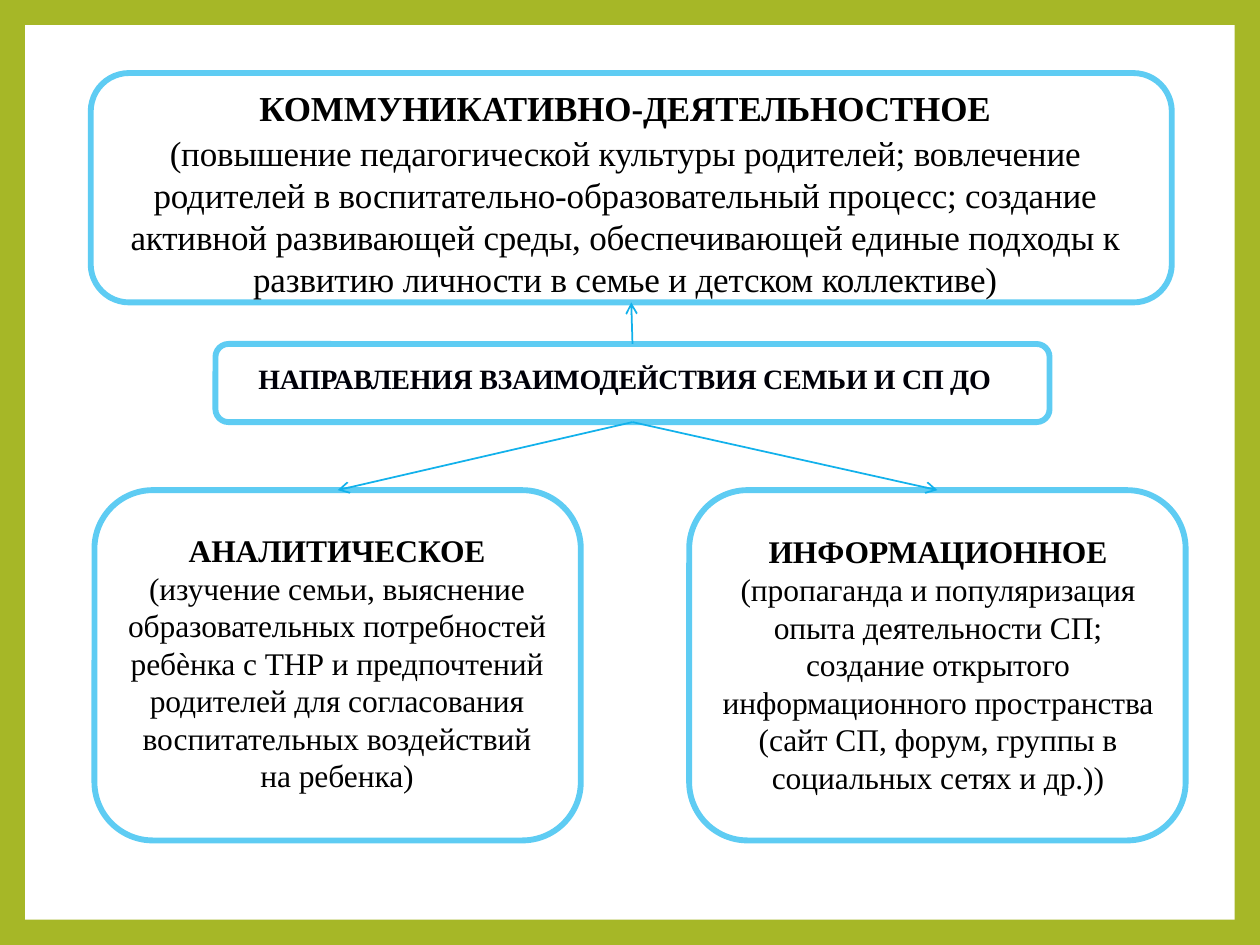
from lxml.etree import SubElement
from pptx import Presentation
from pptx.dml.color import RGBColor
from pptx.enum.shapes import MSO_CONNECTOR, MSO_SHAPE
from pptx.enum.text import MSO_ANCHOR, PP_ALIGN
from pptx.oxml.ns import qn
from pptx.util import Inches, Pt

COLORS = {"frame": "A6B727", "paper": "FFFFFF", "outline": "5ECCF3",
          "arrow": "12B1EB", "text": "000000", "center": "000009"}
FONT = "Times New Roman"
TOP, BOTTOM = 0, 2  # connection sites of a rounded rectangle

# Each card: frame and text area as left, top, width, height in inches;
# text size, line pitch, gap under the heading in points; spacing in 1/100 pt
CARDS = {
    "activity": {
        "frame": (0.72, 0.58, 8.58, 1.82), "area": (0.74, 0.69, 8.44, 1.7),
        "size": 20, "pitch": 24, "gap": 1.5, "spacing": -10,
        "color": "text",
        "heading": "КОММУНИКАТИВНО-ДЕЯТЕЛЬНОСТНОЕ",
        "lines": ["(повышение педагогической культуры родителей; вовлечение",
                  "родителей в воспитательно-образовательный процесс; создание",
                  "активной развивающей среды, обеспечивающей единые подходы к",
                  "развитию личности в семье и детском коллективе)"]},
    "directions": {
        "frame": (1.71, 2.73, 6.62, 0.62), "area": (1.04, 2.88, 7.84, 0.27),
        "size": 16, "pitch": 18.4, "gap": 0, "spacing": -15,
        "color": "center",
        "heading": "НАПРАВЛЕНИЯ ВЗАИМОДЕЙСТВИЯ СЕМЬИ И СП ДО",
        "lines": []},
    "analysis": {
        "frame": (0.75, 3.89, 3.86, 2.78), "area": (0.99, 4.22, 3.37, 2.12),
        "size": 18, "pitch": 21.4, "gap": 0, "spacing": -5,
        "color": "text",
        "heading": "АНАЛИТИЧЕСКОЕ",
        "lines": ["(изучение семьи, выяснение", "образовательных потребностей",
                  "ребѐнка с ТНР и предпочтений", "родителей для согласования",
                  "воспитательных воздействий", "на ребенка)"]},
    "information": {
        "frame": (5.47, 3.89, 3.94, 2.78), "area": (5.71, 4.22, 3.47, 2.12),
        "size": 18, "pitch": 21.5, "gap": 0.5, "spacing": -5,
        "color": "text",
        "heading": "ИНФОРМАЦИОННОЕ",
        "lines": ["(пропаганда и популяризация", "опыта деятельности СП;",
                  "создание открытого", "информационного пространства",
                  "(сайт СП, форум, группы в", "социальных сетях и др.))"]},
}
# Arrows leave the central card: start site, target card, target site
ARROWS = [(TOP, "activity", BOTTOM), (BOTTOM, "analysis", TOP),
          (BOTTOM, "information", TOP)]


def rgb(name):
    return RGBColor.from_string(COLORS[name])


def set_all(target, values):
    for name, value in values.items():
        setattr(target, name, value)


def add_panel(page, kind, frame, outline=None):
    panel = page.shapes.add_shape(kind, *map(Inches, frame))
    panel.shadow.inherit = False
    panel.fill.solid()
    panel.fill.fore_color.rgb = rgb("paper")
    if outline:
        panel.line.color.rgb = rgb(outline)
        panel.line.width = Pt(3.35)
    else:
        panel.line.fill.background()
    return panel


def add_words(page, card):
    box = page.shapes.add_textbox(*map(Inches, card["area"]))
    frame = box.text_frame
    set_all(frame, {"word_wrap": True, "vertical_anchor": MSO_ANCHOR.TOP,
                    "margin_left": 0, "margin_right": 0,
                    "margin_top": 0, "margin_bottom": 0})
    # Heading first, then the description with its line breaks
    texts = [card["heading"]]
    if card["lines"]:
        texts.append("\v".join(card["lines"]))
    for index, text in enumerate(texts):
        para = frame.add_paragraph() if index else frame.paragraphs[0]
        para.text = text
        set_all(para, {"alignment": PP_ALIGN.CENTER,
                       "line_spacing": Pt(card["pitch"]),
                       "space_before": Pt(card["gap"] if index else 0)})
        for span in para.runs:
            set_all(span.font, {"name": FONT, "size": Pt(card["size"]),
                                "bold": index == 0})
            span.font.color.rgb = rgb(card["color"])
            span._r.get_or_add_rPr().set("spc", str(card["spacing"]))


def add_arrow(page, start, start_site, end, end_site):
    arrow = page.shapes.add_connector(MSO_CONNECTOR.STRAIGHT, 0, 0, 0, 0)
    arrow.begin_connect(start, start_site)
    arrow.end_connect(end, end_site)
    arrow.line.color.rgb = rgb("arrow")
    arrow.line.width = Pt(1)
    SubElement(arrow.line._get_or_add_ln(), qn("a:tailEnd"), type="arrow")
    SubElement(arrow._element.spPr, qn("a:effectLst"))


def main():
    deck = Presentation()
    set_all(deck, {"slide_width": Inches(10), "slide_height": Inches(7.5)})
    page = deck.slides.add_slide(deck.slide_layouts[6])

    # Green border around a white sheet
    page.background.fill.solid()
    page.background.fill.fore_color.rgb = rgb("frame")
    add_panel(page, MSO_SHAPE.RECTANGLE, (0.2, 0.2, 9.6, 7.1))

    # Cards and their text
    panels = {}
    for name, card in CARDS.items():
        panels[name] = add_panel(page, MSO_SHAPE.ROUNDED_RECTANGLE,
                                 card["frame"], "outline")
        add_words(page, card)

    # Arrows from the centre to the three directions
    for start_site, target, end_site in ARROWS:
        add_arrow(page, panels["directions"], start_site,
                  panels[target], end_site)

    deck.save("out.pptx")


if __name__ == "__main__":
    main()
